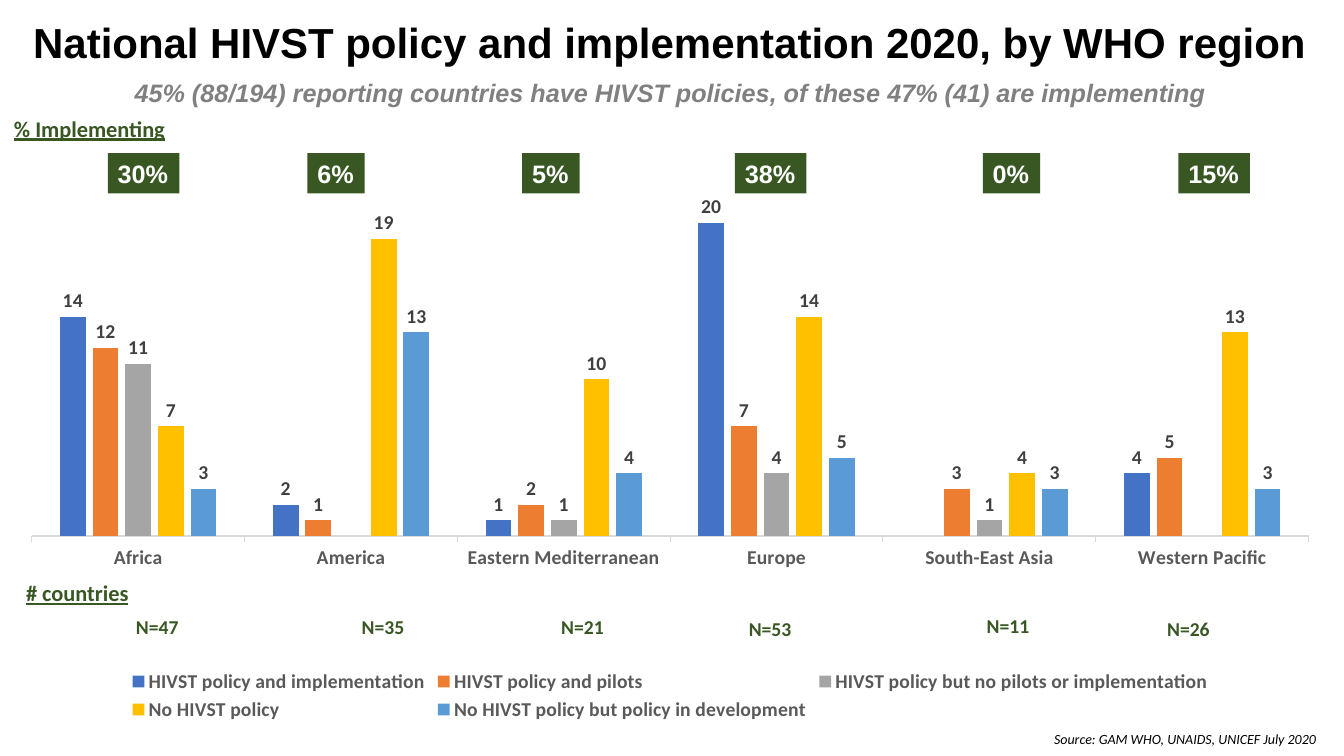
"""Build the slide on national HIVST policy and implementation by WHO region."""
from dataclasses import dataclass
from typing import Optional

from lxml import etree
from pptx import Presentation
from pptx.chart.data import CategoryChartData
from pptx.dml.color import RGBColor
from pptx.enum.chart import XL_CHART_TYPE, XL_LABEL_POSITION, XL_LEGEND_POSITION, XL_TICK_MARK
from pptx.enum.shapes import MSO_SHAPE
from pptx.enum.text import MSO_ANCHOR, MSO_AUTO_SIZE, PP_ALIGN
from pptx.oxml.ns import qn
from pptx.util import Pt

CLUSTERED = XL_CHART_TYPE.COLUMN_CLUSTERED
OUTSIDE_END = XL_LABEL_POSITION.OUTSIDE_END
LEGEND_BOTTOM = XL_LEGEND_POSITION.BOTTOM
TICK_OUTSIDE, TICK_NONE = XL_TICK_MARK.OUTSIDE, XL_TICK_MARK.NONE
RECTANGLE = MSO_SHAPE.RECTANGLE
TOP, MIDDLE = MSO_ANCHOR.TOP, MSO_ANCHOR.MIDDLE
NO_AUTOFIT, GROW = MSO_AUTO_SIZE.NONE, MSO_AUTO_SIZE.SHAPE_TO_FIT_TEXT
LEFT, CENTER = PP_ALIGN.LEFT, PP_ALIGN.CENTER

BLACK = RGBColor(0x00, 0x00, 0x00)
WHITE = RGBColor(0xFF, 0xFF, 0xFF)
GREEN = RGBColor(0x38, 0x57, 0x23)
SUBTITLE_GREY = RGBColor(0x80, 0x80, 0x80)
AXIS_TEXT = RGBColor(0x59, 0x59, 0x59)
LABEL_TEXT = RGBColor(0x40, 0x40, 0x40)
AXIS_LINE = RGBColor(0xD9, 0xD9, 0xD9)


@dataclass(frozen=True)
class Box:
    left: float
    top: float
    width: float
    height: float

    def emu(self) -> tuple:
        return Pt(self.left), Pt(self.top), Pt(self.width), Pt(self.height)


@dataclass(frozen=True)
class Style:
    size: float
    color: RGBColor
    name: str = "Calibri"
    bold: bool = True
    italic: bool = False
    underline: bool = False


@dataclass(frozen=True)
class Region:
    name: str
    implementing: str
    badge: Box
    countries: int
    count_left: float
    count_top: float
    values: tuple


@dataclass(frozen=True)
class Policy:
    name: str
    color: RGBColor


def badge_box(left: float, width: float) -> Box:
    return Box(left, 109.4, width, 28.8)


WIDE, NARROW = 51.1, 41
REGIONS = (
    Region("Africa", "30%", badge_box(77, WIDE), 47, 90, 435.6, (14, 12, 11, 7, 3)),
    Region("America", "6%", badge_box(219.6, NARROW), 35, 251.3, 435.6, (2, 1, None, 19, 13)),
    Region("Eastern Mediterranean", "5%", badge_box(373, NARROW), 21, 393.8, 435.6, (1, 2, 1, 10, 4)),
    Region("Europe", "38%", badge_box(524.9, WIDE), 53, 527.8, 437, (20, 7, 4, 14, 5)),
    Region("South-East Asia", "0%", badge_box(702, NARROW), 11, 697.7, 434.9, (None, 3, 1, 4, 3)),
    Region("Western Pacific", "15%", badge_box(841.7, WIDE), 26, 826.6, 437, (4, 5, None, 13, 3)),
)
POLICIES = (
    Policy("HIVST policy and implementation", RGBColor(0x44, 0x72, 0xC4)),
    Policy("HIVST policy and pilots", RGBColor(0xED, 0x7D, 0x31)),
    Policy("HIVST policy but no pilots or implementation", RGBColor(0xA5, 0xA5, 0xA5)),
    Policy("No HIVST policy", RGBColor(0xFF, 0xC0, 0x00)),
    Policy("No HIVST policy but policy in development", RGBColor(0x5B, 0x9B, 0xD5)),
)
TITLE_LINES = (
    ("National HIVST policy and implementation 2020, by WHO region",
     Style(30, BLACK, "Arial"), 0),
    ("45% (88/194) reporting countries have HIVST policies, of these 47% (41) are implementing",
     Style(18, SUBTITLE_GREY, "Arial", italic=True), 9),
)
HEADINGS = (
    ("# countries", Box(11.5, 410.4, 90, 26.6)),
    ("% Implementing", Box(2.9, 78.5, 147.6, 26.6)),
)
TITLE_BOX = Box(11.5, 11.5, 934.5, 69.8)
SOURCE_BOX = Box(745.9, 518.4, 206.6, 19.4)
CHART_BOX = Box(11.5, 92.2, 934.5, 426.2)
PLOT_BOX = Box(11.2, 11.1, 912.1, 279.6)
HEADING_STYLE = Style(16, GREEN, underline=True)
BADGE_STYLE = Style(18, WHITE, "Arial")
COUNT_STYLE = Style(14, GREEN)
SOURCE_STYLE = Style(10, BLACK, bold=False, italic=True)


def apply_style(font, style: Style) -> None:
    font.name = style.name
    font.size = Pt(style.size)
    font.bold = style.bold
    font.italic = style.italic
    font.underline = style.underline
    font.color.rgb = style.color


def add_label(slide, text: str, box: Box, style: Style,
              fill: Optional[RGBColor] = None, wrap: bool = False) -> None:
    if fill is None:
        label = slide.shapes.add_textbox(*box.emu())
    else:
        label = slide.shapes.add_shape(RECTANGLE, *box.emu())
        label.shadow.inherit = False
        label.fill.solid()
        label.fill.fore_color.rgb = fill
        label.line.fill.background()
    frame = label.text_frame
    frame.text = text
    frame.word_wrap = wrap
    frame.auto_size = GROW
    frame.vertical_anchor = TOP
    paragraph = frame.paragraphs[0]
    paragraph.alignment = LEFT
    apply_style(paragraph.runs[0].font, style)


def fill_title(title) -> None:
    title.left, title.top, title.width, title.height = TITLE_BOX.emu()
    frame = title.text_frame
    frame.text = "\n".join(text for text, _, _ in TITLE_LINES)
    frame.word_wrap = True
    frame.auto_size = NO_AUTOFIT
    frame.vertical_anchor = MIDDLE
    for paragraph, (_, style, gap) in zip(frame.paragraphs, TITLE_LINES):
        paragraph.alignment = CENTER
        paragraph.line_spacing = 0.9
        paragraph.space_before = Pt(gap)
        apply_style(paragraph.runs[0].font, style)


def place_plot(chart) -> None:
    plot_area = chart.plots[0]._element.getparent()
    for old_layout in plot_area.findall(qn("c:layout")):
        plot_area.remove(old_layout)
    layout = etree.Element(qn("c:layout"))
    manual = etree.SubElement(layout, qn("c:manualLayout"))
    settings = (
        ("layoutTarget", "inner"), ("xMode", "edge"), ("yMode", "edge"),
        ("x", PLOT_BOX.left / CHART_BOX.width), ("y", PLOT_BOX.top / CHART_BOX.height),
        ("w", PLOT_BOX.width / CHART_BOX.width), ("h", PLOT_BOX.height / CHART_BOX.height),
    )
    for tag, value in settings:
        etree.SubElement(manual, qn(f"c:{tag}")).set("val", str(value))
    plot_area.insert(0, layout)


def add_policy_chart(slide) -> None:
    data = CategoryChartData()
    data.categories = [region.name for region in REGIONS]
    for index, policy in enumerate(POLICIES):
        data.add_series(policy.name, [region.values[index] for region in REGIONS])
    chart = slide.shapes.add_chart(CLUSTERED, *CHART_BOX.emu(), data).chart
    chart.has_title = False
    apply_style(chart.font, Style(14, BLACK))

    plot = chart.plots[0]
    plot.gap_width, plot.overlap, plot.vary_by_categories = 219, -27, False
    for series, policy in zip(plot.series, POLICIES):
        series.format.fill.solid()
        series.format.fill.fore_color.rgb = policy.color
        labels = series.data_labels
        labels.show_value = True
        labels.position = OUTSIDE_END
        apply_style(labels.font, Style(14, LABEL_TEXT))

    regions_axis, counts_axis = chart.category_axis, chart.value_axis
    regions_axis.major_tick_mark, regions_axis.minor_tick_mark = TICK_OUTSIDE, TICK_NONE
    regions_axis.format.line.color.rgb = AXIS_LINE
    regions_axis.format.line.width = Pt(0.75)
    apply_style(regions_axis.tick_labels.font, Style(14, AXIS_TEXT))
    counts_axis.minimum_scale, counts_axis.maximum_scale = 0, 25
    counts_axis.has_major_gridlines = False
    counts_axis.visible = False

    chart.has_legend = True
    chart.legend.position = LEGEND_BOTTOM
    chart.legend.include_in_layout = False
    apply_style(chart.legend.font, Style(14, AXIS_TEXT))
    place_plot(chart)


def main() -> None:
    deck = Presentation()
    deck.slide_width, deck.slide_height = Pt(960), Pt(540)
    slide = deck.slides.add_slide(deck.slide_layouts.get_by_name("Title Only"))
    fill_title(slide.shapes.title)
    add_label(slide, "Source: GAM WHO, UNAIDS, UNICEF July 2020", SOURCE_BOX, SOURCE_STYLE)
    add_policy_chart(slide)
    for region in REGIONS:
        count_box = Box(region.count_left, region.count_top, 45.4, 24.5)
        add_label(slide, f"N={region.countries}", count_box, COUNT_STYLE)
    for text, box in HEADINGS:
        add_label(slide, text, box, HEADING_STYLE, fill=WHITE, wrap=True)
    for region in REGIONS:
        add_label(slide, region.implementing, region.badge, BADGE_STYLE, fill=GREEN)
    deck.save("out.pptx")


if __name__ == "__main__":
    main()
